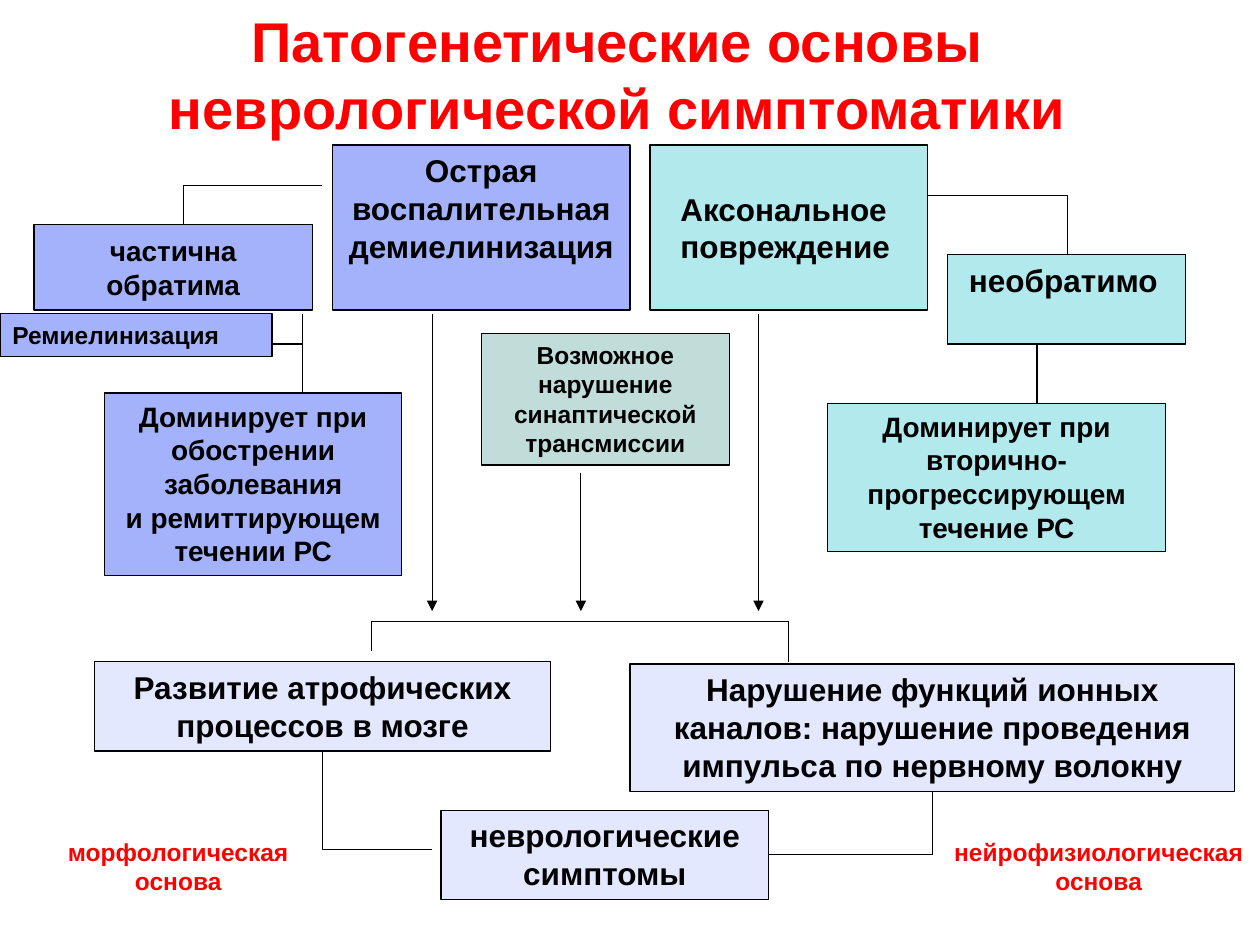
from dataclasses import dataclass
from lxml import etree
from pptx import Presentation
from pptx import util as u
from pptx.dml.color import RGBColor
from pptx.enum import shapes, text
from pptx.oxml.ns import qn


@dataclass(frozen=True)
class Theme:
    font: str = "Arial"
    ink: str = "000000"
    red: str = "FF0000"
    blue: str = "A3B2FB"
    aqua: str = "B1E9ED"
    sage: str = "C1DDDA"
    pale: str = "E3E8FF"
    title: int = 32
    large: int = 18
    mid: int = 16
    small: int = 14
    rule: float = 0.75


THEME = Theme()
WIDE, HIGH = u.Inches(10), u.Inches(7.5)
COLS, ROWS = 100, 75
LEFT, CENTER = text.PP_ALIGN.LEFT, text.PP_ALIGN.CENTER
TOP, MIDDLE = text.MSO_ANCHOR.TOP, text.MSO_ANCHOR.MIDDLE


def rgb(code):
    return RGBColor.from_string(code)


class Area:
    def __init__(self, slide, col, row):
        self.shapes = slide.shapes
        self.col, self.row = col, row

    def point(self, col, row):
        return (round((self.col + col) * WIDE / COLS),
                round((self.row + row) * HIGH / ROWS))

    def span(self, col, row, wide, high):
        return (*self.point(col, row),
                round(wide * WIDE / COLS), round(high * HIGH / ROWS))

    def letter(self, shape, words, size, color, align=CENTER, anchor=TOP, pad=1):
        frame = shape.text_frame
        frame.word_wrap = True
        frame.vertical_anchor = anchor
        frame.margin_left = round(pad * WIDE / COLS)
        frame.text = words
        for para in frame.paragraphs:
            para.alignment = align
            para.font.name = THEME.font
            para.font.size = u.Pt(size)
            para.font.bold = True
            para.font.color.rgb = rgb(color)

    def label(self, box, words, size):
        self.letter(self.shapes.add_textbox(*self.span(*box)),
                    words, size, THEME.red)

    def card(self, box, words, size, fill, **style):
        shape = self.shapes.add_shape(shapes.MSO_SHAPE.RECTANGLE, *self.span(*box))
        shape.shadow.inherit = False
        shape.fill.solid()
        shape.fill.fore_color.rgb = rgb(fill)
        shape.line.color.rgb = rgb(THEME.ink)
        shape.line.width = u.Pt(THEME.rule)
        self.letter(shape, words, size, THEME.ink, **style)

    def line(self, start, end, kind=shapes.MSO_CONNECTOR.STRAIGHT):
        link = self.shapes.add_connector(kind, *self.point(*start), *self.point(*end))
        link.line.color.rgb = rgb(THEME.ink)
        link.line.width = u.Pt(THEME.rule)
        etree.SubElement(link._element.spPr, qn("a:effectLst"))
        return link

    def elbow(self, start, end):
        link = self.line(start, end, shapes.MSO_CONNECTOR.ELBOW)
        link._element.spPr.find(qn("a:prstGeom")).set("prst", "bentConnector2")

    def arrow(self, start, end):
        link = self.line(start, end)
        stroke = link._element.spPr.find(qn("a:ln"))
        etree.SubElement(stroke, qn("a:tailEnd"), type="triangle")


def head(area):
    area.label((0, 0, 98, 11.7),
               "Патогенетические основы неврологической симптоматики",
               THEME.title)


def myelin(area):
    fill = THEME.blue
    area.card((26.4, 0, 23.6, 13.1),
              "Острая\nвоспалительная\nдемиелинизация", THEME.large, fill)
    area.card((2.7, 6.3, 22.1, 6.8), "частична обратима",
              THEME.mid, fill, anchor=MIDDLE)
    area.card((0, 13.4, 21.6, 3.4), "Ремиелинизация",
              THEME.small, fill, align=LEFT)
    area.card((8.3, 19.7, 23.6, 14.5),
              "Доминирует при\nобострении\nзаболевания\n"
              "и ремиттирующем\nтечении РС", THEME.mid, fill)
    area.elbow((25.6, 3.2), (14.6, 6.3))
    area.line((24, 13.4), (24, 19.7))
    area.line((21.6, 15.8), (24, 15.8))


def axon(area):
    fill = THEME.aqua
    area.card((0, 0, 22, 13.1), "Аксональное\nповреждение",
              THEME.large, fill, align=LEFT, anchor=MIDDLE, pad=2.4)
    area.card((23.6, 8.7, 18.9, 7.1), "необратимо",
              THEME.large, fill, align=LEFT, pad=1.7)
    area.card((14.1, 20.5, 26.8, 11.8),
              "Доминирует при\nвторично-\nпрогрессирующем\nтечение РС",
              THEME.mid, fill)
    area.elbow((22, 4), (33.1, 8.7))
    area.line((30.7, 15.8), (30.7, 20.5))


def synapse(area):
    area.card((8.7, 1.6, 19.7, 10.4),
              "Возможное нарушение\nсинаптической трансмиссии",
              THEME.small, THEME.sage)
    for col, row in ((4.8, 0), (16.6, 12.6), (30.7, 0)):
        area.arrow((col, row), (col, 23.6))
    bar = 24.4
    area.line((0, bar), (33.1, bar))
    for col, row in ((0, 26.8), (33.1, 27.6)):
        area.line((col, bar), (col, row))


def result(area):
    for box, words in (
        ((4, 0, 36.2, 7.1), "Развитие атрофических процессов в мозге"),
        ((46.5, 0.2, 48, 10.1),
         "Нарушение функций ионных каналов: нарушение проведения "
         "импульса по нервному волокну"),
        ((31.5, 11.8, 26, 7.1), "неврологические симптомы"),
    ):
        area.card(box, words, THEME.large, THEME.pale)
    area.elbow((30.8, 14.9), (22.1, 7.1))
    area.elbow((57.5, 15.3), (70.5, 10.3))
    area.label((0, 13.4, 21.3, 5.7), "морфологическая\nоснова", THEME.small)
    area.label((70.9, 13.4, 25.6, 5.7), "нейрофизиологическая\nоснова", THEME.small)


def main():
    deck = Presentation()
    deck.slide_width, deck.slide_height = WIDE, HIGH
    slide = deck.slides.add_slide(deck.slide_layouts[6])
    for draw, col, row in (
        (myelin, 0, 11.5),
        (axon, 51.6, 11.5),
        (synapse, 29.5, 24.9),
        (result, 3.5, 52.5),
        (head, 0, 0),
    ):
        draw(Area(slide, col, row))
    deck.save("out.pptx")


if __name__ == "__main__":
    main()
